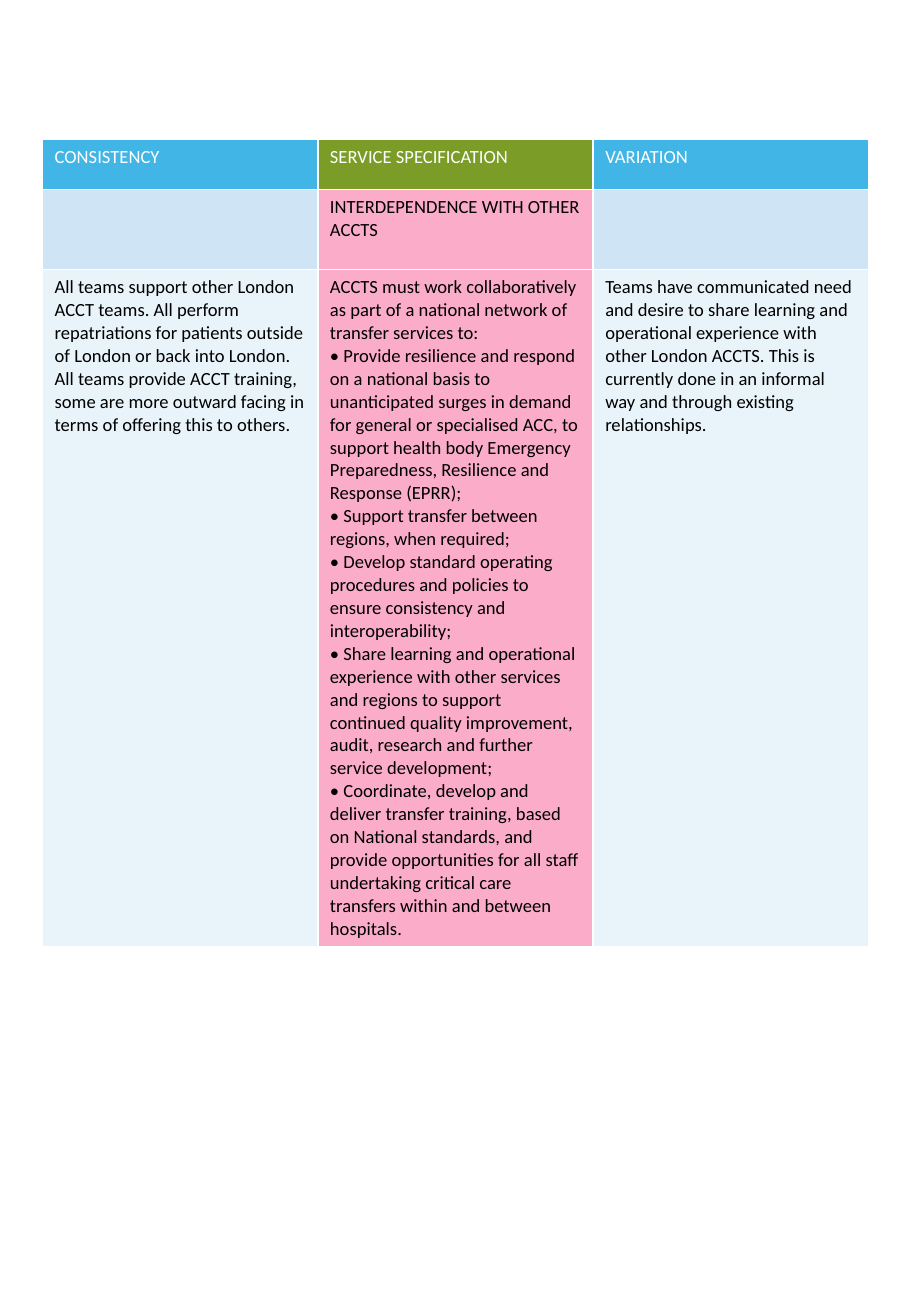
from pptx import Presentation
from pptx.dml.color import RGBColor
from pptx.util import Inches, Pt

# Content: rows of cells, each cell a list of paragraphs
ROWS = [
    [["CONSISTENCY"], ["SERVICE SPECIFICATION"], ["VARIATION"]],
    [[], ["INTERDEPENDENCE WITH OTHER ACCTS"], []],
    [
        [
            "All teams support other London ACCT teams. All perform repatriations "
            "for patients outside of London or back into London.",
            "All teams provide ACCT training, some are more outward facing in terms "
            "of offering this to others.",
        ],
        [
            "ACCTS must work collaboratively as part of a national network of "
            "transfer services to:",
            "• Provide resilience and respond on a national basis to unanticipated "
            "surges in demand for general or specialised ACC, to support health body "
            "Emergency Preparedness, Resilience and Response (EPRR);",
            "• Support transfer between regions, when required;",
            "• Develop standard operating procedures and policies to ensure "
            "consistency and interoperability;",
            "• Share learning and operational experience with other services and "
            "regions to support continued quality improvement, audit, research and "
            "further service development;",
            "• Coordinate, develop and deliver transfer training, based on National "
            "standards, and provide opportunities for all staff undertaking critical "
            "care transfers within and between hospitals.",
        ],
        [
            "Teams have communicated need and desire to share learning and "
            "operational experience with other London ACCTS. This is currently done "
            "in an informal way and through existing relationships.",
        ],
    ],
]

COLOURS = {
    "white": "FFFFFF", "black": "000000", "blue": "41B6E6", "green": "7B9C27",
    "pink": "FAACC9", "light blue": "CFE5F5", "pale blue": "E9F3FA",
}
# For each row: fill of the outer columns, fill of the middle column, text
ROW_COLOURS = [
    ("blue", "green", "white"),
    ("light blue", "pink", "black"),
    ("pale blue", "pink", "black"),
]
TEXT_FORMAT = {"name": "Calibri", "size": Pt(11), "bold": False}

# Layout in inches
PAGE_WIDTH, PAGE_HEIGHT = 7.5, 10.83
LEFT, TOP = 0.35, 1.15
ROW_HEIGHTS = [0.41, 0.66, 5.57]
TABLE_WIDTH = PAGE_WIDTH - 2 * LEFT


def colour(name):
    return RGBColor.from_string(COLOURS[name])


def fill_cell(cell, paragraphs, fill_name, text_name):
    cell.fill.solid()
    cell.fill.fore_color.rgb = colour(fill_name)
    frame = cell.text_frame
    frame.text = "\n".join(paragraphs)
    for para in frame.paragraphs:
        for span in para.runs:
            for key, value in TEXT_FORMAT.items():
                setattr(span.font, key, value)
            span.font.color.rgb = colour(text_name)


def main():
    deck = Presentation()
    deck.slide_width, deck.slide_height = Inches(PAGE_WIDTH), Inches(PAGE_HEIGHT)
    page = deck.slides.add_slide(deck.slide_layouts[6])

    # Comparison table; its default style draws the white cell borders
    table = page.shapes.add_table(
        len(ROWS), len(ROWS[0]), Inches(LEFT), Inches(TOP),
        Inches(TABLE_WIDTH), Inches(sum(ROW_HEIGHTS)),
    ).table
    for row, height in zip(table.rows, ROW_HEIGHTS):
        row.height = Inches(height)

    # Cells
    for row, texts, (outer, middle, text_name) in zip(table.rows, ROWS, ROW_COLOURS):
        for cell, paragraphs, fill_name in zip(row.cells, texts, (outer, middle, outer)):
            fill_cell(cell, paragraphs, fill_name, text_name)

    deck.save("out.pptx")


if __name__ == "__main__":
    main()
